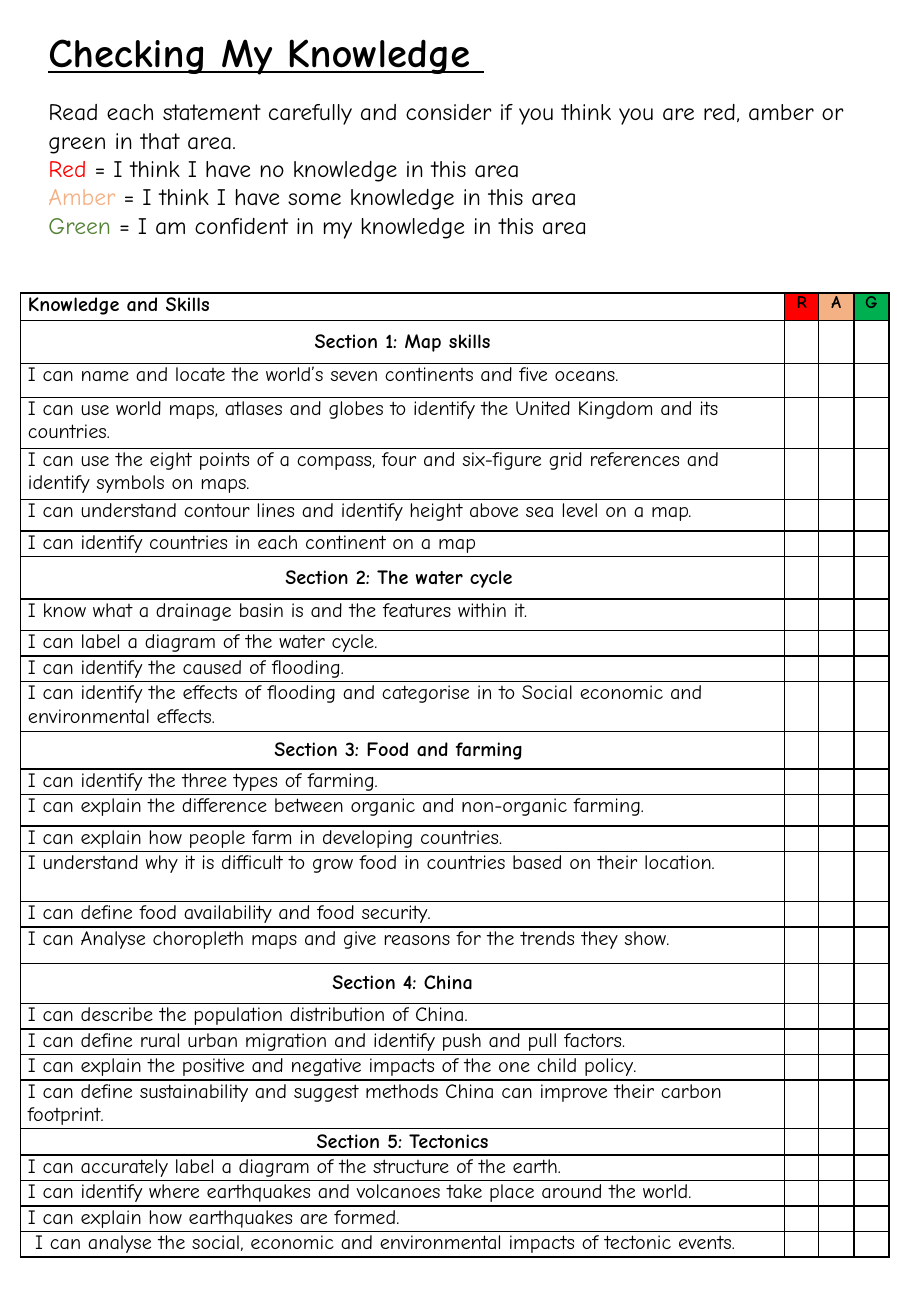
from lxml import etree
from pptx import Presentation, util as u
from pptx.dml.color import RGBColor
from pptx.enum import text as t
from pptx.oxml import ns

FACE = "Comic Neue"
HUES = {"ink": "000000", "red": "FF0000", "amber": "F4B083", "green": "538135",
        "R": "FF0000", "A": "F4B183", "G": "00B050"}

deck = Presentation()
deck.slide_width, deck.slide_height = u.Inches(7.5), u.Inches(10.83)
page = deck.slides.add_slide(deck.slide_layouts[6])


def style(para, size, bold=False):
    font = para.font
    font.name, font.size, font.bold = FACE, u.Pt(size), bold
    font.color.rgb = RGBColor.from_string(HUES["ink"])


def edge(cell):
    props = cell._tc.get_or_add_tcPr()
    for spot, side in enumerate(("lnL", "lnR", "lnT", "lnB")):
        line = etree.Element(ns.qn(f"a:{side}"), w=str(u.Pt(1)))
        fill = etree.SubElement(line, ns.qn("a:solidFill"))
        etree.SubElement(fill, ns.qn("a:srgbClr"), val=HUES["ink"])
        props.insert(spot, line)


# Title and instructions
box = page.shapes.add_textbox(*map(u.Inches, (0.3, 0.17, 6.91, 1.87)))
frame = box.text_frame
frame.word_wrap = True
title = frame.paragraphs[0]
title.add_run().text = "Checking My Knowledge "
style(title, 24, True)
title.font.underline = True

intro = frame.add_paragraph()
intro.add_run().text = ("Read each statement carefully and consider if you think "
                        "you are red, amber or green in that area.")
intro.space_before = u.Pt(13)
style(intro, 14)

# Colour key
for hue, word, rest in (
        ("red", "Red", " = I think I have no knowledge in this area"),
        ("amber", "Amber", " = I think I have some knowledge in this area"),
        ("green", "Green", " = I am confident in my knowledge in this area")):
    para = frame.add_paragraph()
    style(para, 14)
    name = para.add_run()
    name.text = word
    name.font.color.rgb = RGBColor.from_string(HUES[hue])
    para.add_run().text = rest

# Checklist: row height and statement
rows = [
    (0.23, "Knowledge and Skills"),
    (0.35, "Section 1: Map skills"),
    (0.28, "I can name and locate the world’s seven continents and five oceans."),
    (0.42, "I can use world maps, atlases and globes to identify the United Kingdom and its countries."),
    (0.42, "I can use the eight points of a compass, four and six-figure grid references and identify symbols on maps."),
    (0.26, "I can understand contour lines and identify height above sea level on a map."),
    (0.21, "I can identify countries in each continent on a map"),
    (0.35, "Section 2: The water cycle "),
    (0.26, "I know what a drainage basin is and the features within it."),
    (0.21, "I can label a diagram of the water cycle."),
    (0.21, "I can identify the caused of flooding."),
    (0.41, "I can identify the effects of flooding and categorise in to Social economic and environmental effects."),
    (0.31, "Section 3: Food and farming "),
    (0.21, "I can identify the three types of farming."),
    (0.26, "I can explain the difference between organic and non-organic farming."),
    (0.21, "I can explain how people farm in developing countries."),
    (0.41, "I understand why it is difficult to grow food in countries based on their location."),
    (0.21, "I can define food availability and food security."),
    (0.3, "I can Analyse choropleth maps and give reasons for the trends they show."),
    (0.33, "Section 4: China"),
    (0.21, "I can describe the population distribution of China."),
    (0.21, "I can define rural urban migration and identify push and pull factors."),
    (0.21, "I can explain the positive and negative impacts of the one child policy."),
    (0.4, "I can define sustainability and suggest methods China can improve their carbon footprint."),
    (0.22, "Section 5: Tectonics"),
    (0.21, "I can accurately label a diagram of the structure of the earth."),
    (0.21, "I can identify where earthquakes and volcanoes take place around the world."),
    (0.21, "I can explain how earthquakes are formed."),
    (0.21, "I can analyse the social, economic and environmental impacts of tectonic events."),
]
cols = (6.29, 0.28, 0.29, 0.29)
high = sum(tall for tall, _ in rows)
grid = page.shapes.add_table(len(rows), len(cols), *map(
    u.Inches, (0.17, 2.41, sum(cols), high))).table
grid.first_row = grid.horz_banding = False
for col, wide in zip(grid.columns, cols):
    col.width = u.Inches(wide)

for r, (tall, words) in enumerate(rows):
    grid.rows[r].height = u.Inches(tall)
    marks = "RAG" if r == 0 else ("", "", "")
    head = words.startswith("Section")
    for c, label in enumerate((words, *marks)):
        cell = grid.cell(r, c)
        cell.margin_left = cell.margin_right = u.Inches(0.06)
        cell.margin_top = cell.margin_bottom = 0
        cell.fill.background()
        para = cell.text_frame.paragraphs[0]
        if label:
            para.add_run().text = label
            style(para, 10.5 if c else 12, r == 0 or head)
        else:
            # Small type keeps empty cells from stretching the row
            etree.SubElement(para._p, ns.qn("a:endParaRPr"), sz="1000")
        if c and label:
            cell.fill.solid()
            cell.fill.fore_color.rgb = RGBColor.from_string(HUES[label])
        if head:
            cell.vertical_anchor = t.MSO_ANCHOR.MIDDLE
        if head or c:
            para.alignment = t.PP_ALIGN.CENTER
        edge(cell)

# The last statement sits slightly further in
grid.cell(len(rows) - 1, 0).margin_left = u.Inches(0.12)

deck.save("out.pptx")
